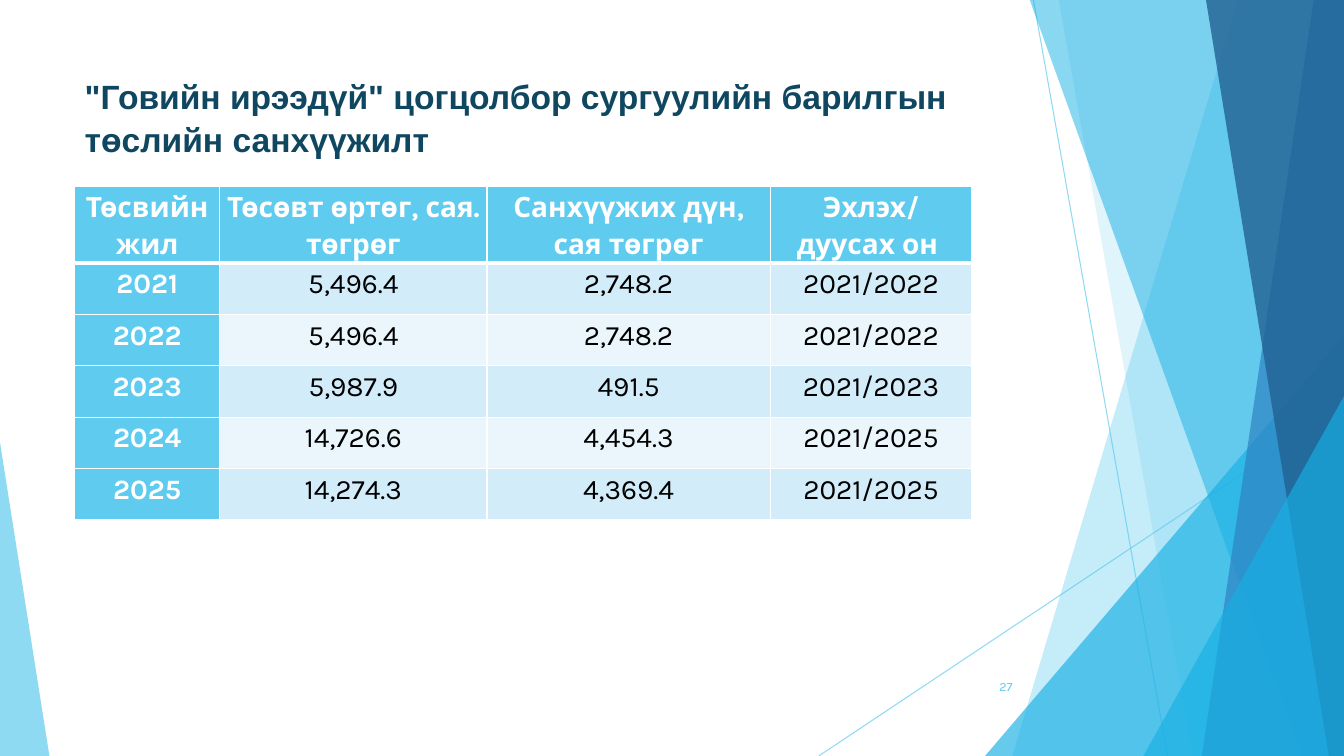
from lxml.etree import SubElement
from pptx import Presentation
from pptx.dml.color import RGBColor
from pptx.enum.shapes import MSO_CONNECTOR, MSO_SHAPE
from pptx.enum.text import MSO_ANCHOR, MSO_AUTO_SIZE, PP_ALIGN
from pptx.oxml.ns import qn
from pptx.util import Pt

PX = 9144  # 100 px to the inch
WIDTH, HEIGHT = 1333, 750
SKY, CYAN, BLUE, NAVY = "5FCBEF", "17B0E4", "2E83C3", "226292"
WHITE, BLACK, TITLE_COLOR = "FFFFFF", "000000", "0F4761"
BANDS = ("D2ECF9", "EAF6FC")

COLUMN_WIDTHS = (144, 265, 281, 200)
HEADER_HEIGHT, ROW_HEIGHT = 76, 51
ROWS = (
    ("Төсвийн жил", "Төсөвт өртөг, сая. төгрөг", "Санхүүжих дүн, сая төгрөг", "Эхлэх/дуусах он "),
    ("2021", "5,496.4", "2,748.2", "2021/2022"),
    ("2022", "5,496.4", "2,748.2", "2021/2022"),
    ("2023", "5,987.9", "491.5", "2021/2023"),
    ("2024", "14,726.6", "4,454.3", "2021/2025"),
    ("2025", "14,274.3", "4,369.4", "2021/2025"),
)


def rgb(color):
    return RGBColor.from_string(color)


def box(*lengths):
    return [n * PX for n in lengths]


def set_alpha(sp, percent):
    for clr in sp._element.spPr.iter(qn("a:srgbClr")):
        SubElement(clr, qn("a:alpha"), val=str(percent * 1000))


def style_facet(sp, color, alpha):
    sp.shadow.inherit = False
    sp.fill.solid()
    sp.fill.fore_color.rgb = rgb(color)
    sp.line.fill.background()
    set_alpha(sp, alpha)


def add_ray(s, start, end):
    ray = s.shapes.add_connector(MSO_CONNECTOR.STRAIGHT, *box(*start, *end))
    ray.line.color.rgb = rgb(SKY)
    ray.line.width = Pt(0.75)
    set_alpha(ray, 70)
    SubElement(ray._element.spPr, qn("a:effectLst"))


def add_facet(s, top_x, bottom_x, color, alpha):
    """Fill from a slanted left edge to the right edge of the slide."""
    builder = s.shapes.build_freeform(top_x, -1, PX)
    builder.add_line_segments([(WIDTH, -1), (WIDTH, HEIGHT), (bottom_x, HEIGHT)])
    style_facet(builder.convert_to_shape(), color, alpha)


def add_corner(s, x, y, w, tip, color, alpha):
    """Triangle standing on the bottom edge, tip at 0 (left) or 1 (right)."""
    sp = s.shapes.add_shape(MSO_SHAPE.ISOSCELES_TRIANGLE, *box(x, y, w, HEIGHT - y))
    sp.adjustments[0] = tip
    style_facet(sp, color, alpha)


def add_run(p, text, size, color, font="Karla", bold=False):
    r = p.add_run()
    r.text = text
    r.font.size = Pt(size)
    r.font.name = font
    r.font.bold = bold
    r.font.color.rgb = rgb(color)


def set_borders(cell, top, bottom):
    tcPr = cell._tc.get_or_add_tcPr()
    for side, points in (("L", 1), ("R", 1), ("T", top), ("B", bottom)):
        ln = SubElement(tcPr, qn(f"a:ln{side}"), w=str(Pt(points)))
        SubElement(SubElement(ln, qn("a:solidFill")), qn("a:srgbClr"), val=WHITE)


def fill_cell(cell, text, row, col):
    accent = row == 0 or col == 0
    set_borders(cell, 3 if row == 1 else 1, 3 if row == 0 else 1)
    cell.fill.solid()
    cell.fill.fore_color.rgb = rgb(SKY if accent else BANDS[(row - 1) % 2])
    cell.margin_left = cell.margin_right = 7 * PX
    cell.margin_top = cell.margin_bottom = 0
    p = cell.text_frame.paragraphs[0]
    p.alignment = PP_ALIGN.CENTER
    p.line_spacing = 1.15
    add_run(p, text, 20, WHITE if accent else BLACK, bold=accent)


def add_funding_table(s, x, y):
    height = HEADER_HEIGHT + ROW_HEIGHT * (len(ROWS) - 1)
    frame = s.shapes.add_table(len(ROWS), len(COLUMN_WIDTHS), *box(x, y, sum(COLUMN_WIDTHS), height))
    table = frame.table
    for column, width in zip(table.columns, COLUMN_WIDTHS):
        column.width = width * PX
    for i, texts in enumerate(ROWS):
        table.rows[i].height = (ROW_HEIGHT if i else HEADER_HEIGHT) * PX
        for j, text in enumerate(texts):
            fill_cell(table.cell(i, j), text, i, j)


def set_title(s, text):
    title = s.shapes.title
    title.left, title.top, title.width, title.height = box(74, 67, 940, 144)
    tf = title.text_frame
    tf.word_wrap = True
    tf.auto_size = MSO_AUTO_SIZE.NONE
    tf.vertical_anchor = MSO_ANCHOR.TOP
    p = tf.paragraphs[0]
    p.alignment = PP_ALIGN.LEFT
    p.line_spacing = 1.07
    add_run(p, text, 24, TITLE_COLOR, "Arial", True)


def add_page_number(s, number):
    tf = s.shapes.add_textbox(*box(939, 661, 75, 40)).text_frame
    tf.word_wrap = True
    tf.vertical_anchor = MSO_ANCHOR.MIDDLE
    p = tf.paragraphs[0]
    p.alignment = PP_ALIGN.RIGHT
    add_run(p, number, 9, SKY)


def add_backdrop(s):
    add_ray(s, (1025, 0), (1158, HEIGHT))
    add_ray(s, (WIDTH, 403), (812, HEIGHT))
    add_facet(s, 1228, 1004, SKY, 36)
    add_facet(s, 1050, 1183, SKY, 20)
    add_corner(s, 977, 333, 356, 1, CYAN, 66)
    add_facet(s, 1021, 1291, CYAN, 50)
    add_facet(s, 1303, 1192, BLUE, 70)
    add_facet(s, 1196, 1318, NAVY, 80)
    add_corner(s, 1134, 393, 199, 1, CYAN, 66)
    add_corner(s, 0, 439, 49, 0, SKY, 70)


def main():
    prs = Presentation()
    prs.slide_width, prs.slide_height = box(WIDTH, HEIGHT)
    s = prs.slides.add_slide(prs.slide_layouts[5])
    add_backdrop(s)
    set_title(s, '"Говийн ирээдүй" цогцолбор сургуулийн барилгын төслийн санхүүжилт')
    add_funding_table(s, 74, 185)
    add_page_number(s, "27")
    prs.save("out.pptx")


if __name__ == "__main__":
    main()
